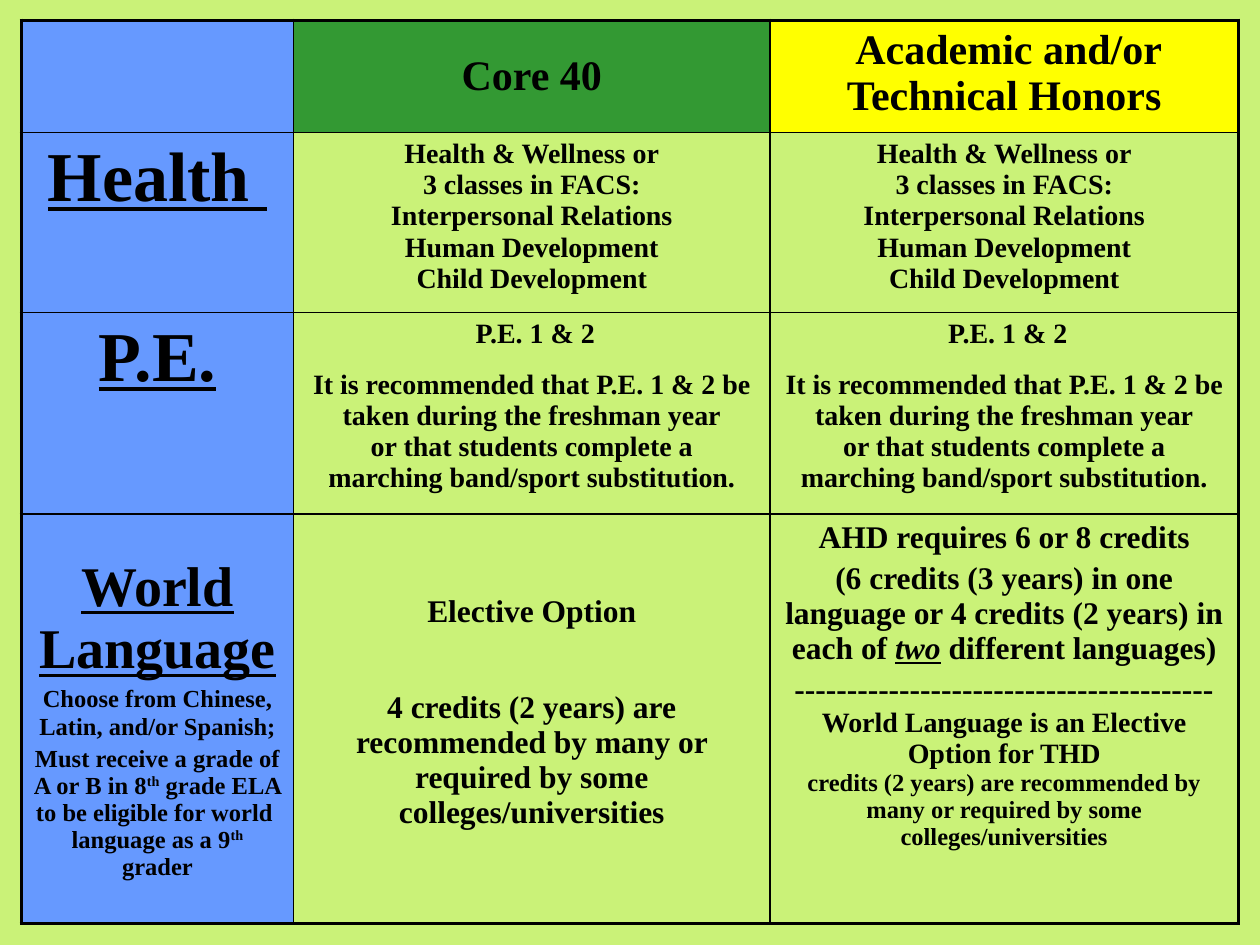
from lxml.etree import SubElement
from pptx import Presentation
from pptx.dml.color import RGBColor as RGB
from pptx.enum.text import MSO_ANCHOR as ANCHOR, PP_ALIGN as ALIGN
from pptx.oxml.ns import qn
from pptx.util import Cm, Pt

COLORS = {"background": "CAF278", "label": "6699FF", "core": "339933",
          "honors": "FFFF00", "ink": "000000"}
FONT = "Times New Roman"
COL_WIDTHS = [5.49, 9.6, 9.45]
ROW_HEIGHTS = [2.26, 3.63, 4.06, 8.26]
OUTER, INNER = 2.25, 1
UNDERLINE = {"underline": True}
SUPER = {"superscript": True}

# A paragraph is (text or runs, size, space before); a run is (text, format).
health = [(line, 16, 0) for line in (
    "Health & Wellness or", "3 classes in FACS:", "Interpersonal Relations",
    "Human Development", "Child Development")]
pe = [
    (" P.E. 1 & 2", 16, 0),
    ("It is recommended that P.E. 1 & 2 be taken during the freshman year", 16, 11),
    ("or that students complete a", 16, 0),
    ("marching band/sport substitution.", 16, 0),
]
language_label = [
    ([("World Language", UNDERLINE)], 32, 6.4),
    ("Choose from Chinese, Latin, and/or Spanish;", 14, 2.8),
    ([("Must receive a grade of A or B in 8", {}), ("th", SUPER),
      (" grade ELA to be eligible for world  language as a 9", {}),
      ("th", SUPER), (" grader", {})], 14, 2.8),
]
language_core = [
    ("Elective Option", 18, 0),
    ("4 credits (2 years) are recommended by many or required by some "
     "colleges/universities", 18, 35),
]
language_honors = [
    ("AHD requires 6 or 8 credits", 18, 3.6),
    ([("(6 credits (3 years) in one language or 4 credits (2 years) in each of ", {}),
      ("two", {"italic": True, "underline": True}),
      (" different languages)", {})], 18, 3.6),
    ("-" * 40, 18, 3.6),
    ("World Language is an Elective Option for THD", 16, 0),
    ("credits (2 years) are recommended by many or required by some "
     "colleges/universities", 14, 0),
]
grid = [
    [[], [("Core 40", 24, 0)], [(" Academic and/or Technical Honors", 24, 0)]],
    [[([("Health ", UNDERLINE)], 40, 8)], health, health],
    [[([("P.E.", UNDERLINE)], 40, 8)], pe, pe],
    [language_label, language_core, language_honors],
]


def set_border(cell, side, width):
    ln = SubElement(cell._tc.get_or_add_tcPr(), qn(f"a:ln{side}"), w=str(Pt(width)))
    fill = SubElement(ln, qn("a:solidFill"))
    SubElement(fill, qn("a:srgbClr"), val=COLORS["ink"])


def write_cell(cell, paragraphs):
    tf = cell.text_frame
    for i, (content, size, before) in enumerate(paragraphs):
        p = tf.add_paragraph() if i else tf.paragraphs[0]
        p.alignment = ALIGN.CENTER
        p.space_before = Pt(before)
        runs = [(content, {})] if isinstance(content, str) else content
        for text, extra in runs:
            r = p.add_run()
            r.text = text
            r.font.color.rgb = RGB.from_string(COLORS["ink"])
            fmt = {"name": FONT, "size": Pt(size), "bold": True, **extra}
            if fmt.pop("superscript", False):
                r._r.get_or_add_rPr().set("baseline", "30000")
            for key, value in fmt.items():
                setattr(r.font, key, value)


prs = Presentation()
prs.slide_width, prs.slide_height = Cm(25.4), Cm(19.05)
s = prs.slides.add_slide(prs.slide_layouts[6])
s.background.fill.solid()
s.background.fill.fore_color.rgb = RGB.from_string(COLORS["background"])

n_rows, n_cols = len(ROW_HEIGHTS), len(COL_WIDTHS)
table = s.shapes.add_table(n_rows, n_cols, Cm(0.43), Cm(0.41),
                           Cm(sum(COL_WIDTHS)), Cm(sum(ROW_HEIGHTS))).table
table.first_row = table.horz_banding = False
for column, width in zip(table.columns, COL_WIDTHS):
    column.width = Cm(width)
for row, height in zip(table.rows, ROW_HEIGHTS):
    row.height = Cm(height)

header_fills = {1: "core", 2: "honors"}
for i, row in enumerate(grid):
    for j, paragraphs in enumerate(row):
        cell = table.cell(i, j)
        edges = {"L": j == 0, "R": j == n_cols - 1, "T": i == 0, "B": i == n_rows - 1}
        for side, is_outer in edges.items():
            set_border(cell, side, OUTER if is_outer else INNER)
        fill_name = "label" if j == 0 else header_fills[j] if i == 0 else None
        if fill_name:
            cell.fill.solid()
            cell.fill.fore_color.rgb = RGB.from_string(COLORS[fill_name])
        else:
            cell.fill.background()
        write_cell(cell, paragraphs)

for i, j in ((0, 1), (3, 0)):
    table.cell(i, j).vertical_anchor = ANCHOR.MIDDLE
table.cell(3, 1).margin_top = Cm(1.63)

prs.save("out.pptx")
